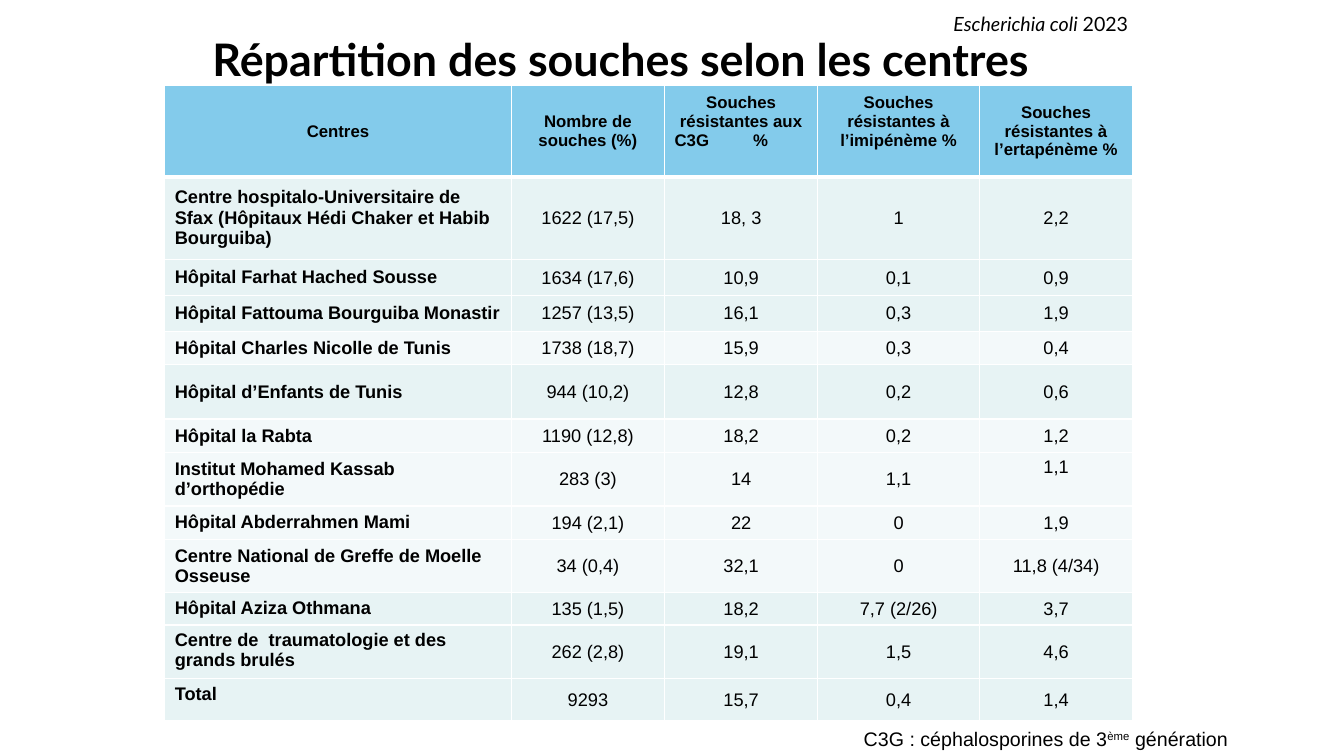
"""Build the slide on how Escherichia coli strains are spread over the centres."""
from lxml import etree
from pptx import Presentation
from pptx.dml.color import RGBColor
from pptx.enum.text import MSO_ANCHOR, PP_ALIGN
from pptx.oxml.ns import qn
from pptx.util import Pt

LEFT, CENTER = PP_ALIGN.LEFT, PP_ALIGN.CENTER
TOP, MIDDLE = MSO_ANCHOR.TOP, MSO_ANCHOR.MIDDLE
BLACK = RGBColor(0x00, 0x00, 0x00)
WHITE = RGBColor(0xFF, 0xFF, 0xFF)
HEADER_BLUE = RGBColor(0x83, 0xCB, 0xEB)
BAND_DARK = RGBColor(0xE7, 0xF3, 0xF4)
BAND_LIGHT = RGBColor(0xF3, 0xF9, 0xFA)

COLUMN_WIDTHS = [247.5, 109.5, 109.5, 115.5, 109.5]
ROW_HEIGHTS = [65, 59, 25.7, 25.7, 23.8, 39, 23.8, 38.3, 23.8, 38.3, 23, 38.3, 30]
LIGHT_ROWS = {4, 6, 7, 8, 9}
TOP_ANCHORED_ROWS = {10, 11, 12}
HEADER_GAP = 17
RAISED_CELLS = {(0, 2): HEADER_GAP, (0, 3): HEADER_GAP, (7, 4): 18}
ROWS = [
    ["Centres", "Nombre de souches (%)", "Souches résistantes aux\nC3G\t%",
     "Souches résistantes à l’imipénème %", "Souches résistantes à l’ertapénème %"],
    ["Centre hospitalo-Universitaire de Sfax (Hôpitaux Hédi Chaker et Habib Bourguiba)",
     "1622 (17,5)", "18, 3", "1", "2,2"],
    ["Hôpital Farhat Hached Sousse", "1634 (17,6)", "10,9", "0,1", "0,9"],
    ["Hôpital Fattouma Bourguiba Monastir", "1257 (13,5)", "16,1", "0,3", "1,9"],
    ["Hôpital Charles Nicolle de Tunis", "1738 (18,7)", "15,9", "0,3", "0,4"],
    ["Hôpital d’Enfants de Tunis", "944 (10,2)", "12,8", "0,2", "0,6"],
    ["Hôpital la Rabta", "1190 (12,8)", "18,2", "0,2", "1,2"],
    ["Institut Mohamed Kassab d’orthopédie", "283 (3)", "14", "1,1", "1,1"],
    ["Hôpital Abderrahmen Mami", "194 (2,1)", "22", "0", "1,9"],
    ["Centre National de Greffe de Moelle Osseuse", "34 (0,4)", "32,1", "0", "11,8 (4/34)"],
    ["Hôpital Aziza Othmana", "135 (1,5)", "18,2", "7,7 (2/26)", "3,7"],
    ["Centre de  traumatologie et des grands brulés", "262 (2,8)", "19,1", "1,5", "4,6"],
    ["Total", "9293", "15,7", "0,4", "1,4"],
]


def write(para, text, size=13, font="Arial", bold=False, italic=False, align=LEFT, raised=False):
    para.alignment = align
    span = para.add_run()
    span.text = text
    span.font.size = Pt(size)
    span.font.name = font
    span.font.bold = bold
    span.font.italic = italic
    span.font.color.rgb = BLACK
    if raised:
        span.font._element.set("baseline", "30000")


def set_borders(cell, widths):
    properties = cell._tc.get_or_add_tcPr()
    for side, width in widths.items():
        line = etree.SubElement(properties, qn(f"a:ln{side}"), w=str(Pt(width)))
        fill = etree.SubElement(line, qn("a:solidFill"))
        etree.SubElement(fill, qn("a:srgbClr"), val=str(WHITE))


deck = Presentation()
deck.slide_width, deck.slide_height = Pt(960), Pt(540)
page = deck.slides.add_slide(deck.slide_layouts[6])

table = page.shapes.add_table(
    len(ROWS), len(COLUMN_WIDTHS), Pt(117.7), Pt(61.2),
    Pt(sum(COLUMN_WIDTHS)), Pt(sum(ROW_HEIGHTS))).table
for column, width in zip(table.columns, COLUMN_WIDTHS):
    column.width = Pt(width)
for row, height in zip(table.rows, ROW_HEIGHTS):
    row.height = Pt(height)

for row_index, texts in enumerate(ROWS):
    is_header = row_index == 0
    for column_index, text in enumerate(texts):
        cell = table.cell(row_index, column_index)
        is_name = column_index == 0
        set_borders(cell, {"L": 1, "R": 1, "T": 3 if row_index == 1 else 1,
                           "B": 3 if is_header else 1})
        cell.fill.solid()
        if is_header:
            cell.fill.fore_color.rgb = HEADER_BLUE
        else:
            cell.fill.fore_color.rgb = BAND_LIGHT if row_index in LIGHT_ROWS else BAND_DARK
        side, top, bottom = (7.2, 3.6, 3.6) if is_header or is_name else (0.7, 0.7, 0)
        cell.margin_left = cell.margin_right = Pt(side)
        cell.margin_top = Pt(top)
        cell.margin_bottom = Pt(RAISED_CELLS.get((row_index, column_index), bottom))
        cell.vertical_anchor = TOP if is_name and row_index in TOP_ANCHORED_ROWS else MIDDLE
        for line_index, line_text in enumerate(text.split("\n")):
            para = cell.text_frame.paragraphs[0] if line_index == 0 else cell.text_frame.add_paragraph()
            tabbed = "\t" in line_text
            centered = (is_header or not is_name) and not tabbed
            write(para, line_text, size=12 if is_header else 13,
                  bold=is_header or is_name, align=CENTER if centered else LEFT)
            if tabbed:
                stops = etree.SubElement(para._p.get_or_add_pPr(), qn("a:tabLst"))
                etree.SubElement(stops, qn("a:tab"), pos=str(Pt(56)), algn="l")

title = page.shapes.add_textbox(Pt(144.7), Pt(10), Pt(669.6), Pt(68.4)).text_frame
title.word_wrap = True
title.vertical_anchor = MIDDLE
title.paragraphs[0].line_spacing = 0.9
write(title.paragraphs[0], "Répartition des souches selon les centres", size=32, font="Lato", bold=True)

footnote = page.shapes.add_textbox(Pt(609.9), Pt(515.5), Pt(288), Pt(24.5)).text_frame
footnote.word_wrap = False
write(footnote.paragraphs[0], "C3G : céphalosporines de 3", size=14)
write(footnote.paragraphs[0], "ème", size=14, raised=True)
write(footnote.paragraphs[0], " génération", size=14)

species = page.shapes.add_textbox(Pt(673.9), Pt(5), Pt(181.4), Pt(24.5)).text_frame
species.word_wrap = True
write(species.paragraphs[0], "Escherichia coli ", size=14, font="Lato", italic=True)
write(species.paragraphs[0], "2023", size=14, font="Lato")

deck.save("out.pptx")
